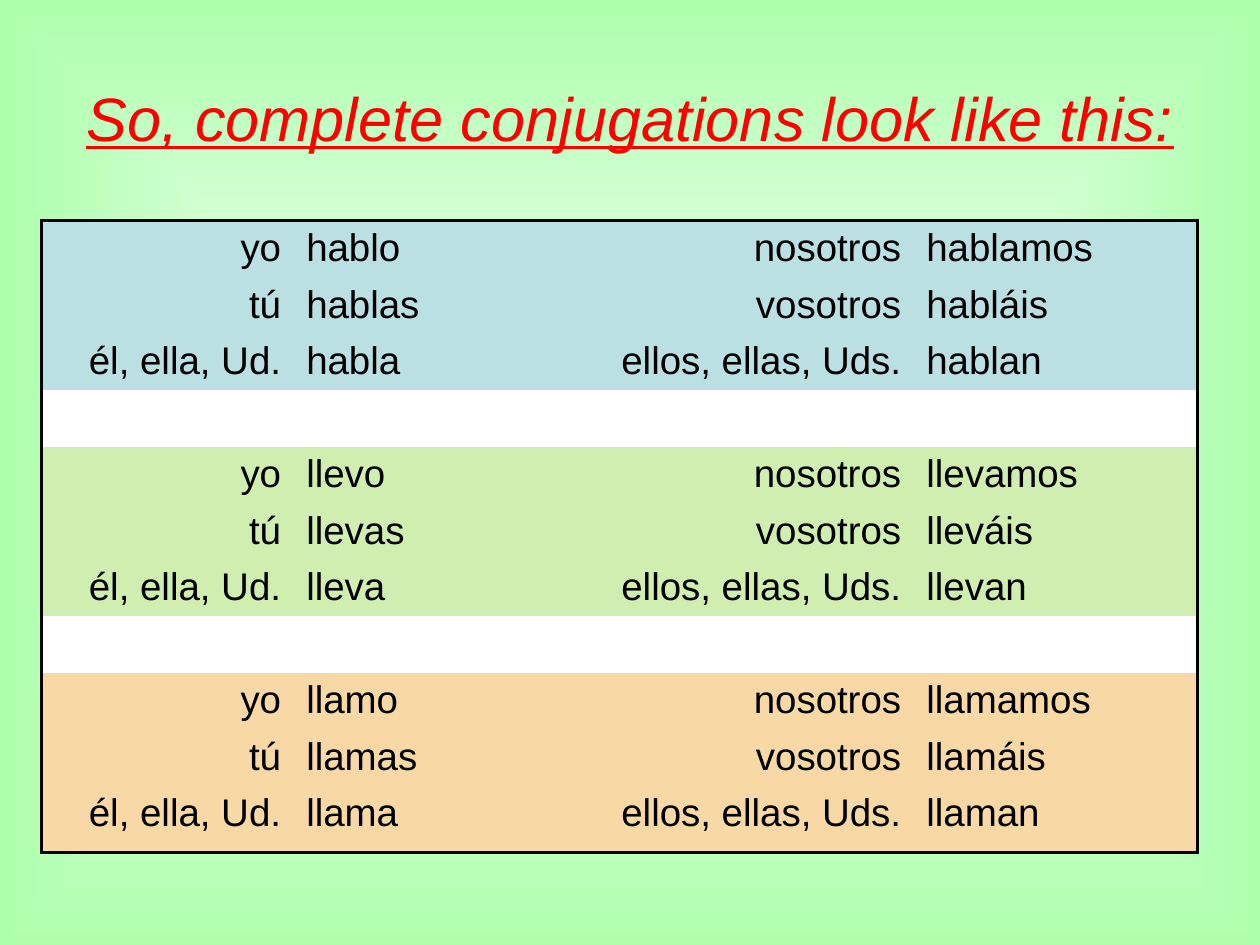
from dataclasses import dataclass

import lxml.etree
import pptx
import pptx.dml.color
import pptx.enum.text
import pptx.oxml.ns
import pptx.util

Cm = pptx.util.Cm
Pt = pptx.util.Pt
Align = pptx.enum.text.PP_ALIGN
qn = pptx.oxml.ns.qn


@dataclass(frozen=True)
class Theme:
    font: str = "Arial"
    title_size: float = 35
    cell_size: float = 22
    border_width: float = 2.25
    title: str = "FF0000"
    ink: str = "000000"
    gap: str = "FFFFFF"
    glow: str = "FFFFFF"
    rim: str = "ADFFAD"
    blue: str = "BBE0E3"
    green: str = "CFEEB0"
    orange: str = "F8D9A6"


def rgb(value):
    return pptx.dml.color.RGBColor.from_string(value)


class SlideBuilder:
    def __init__(self, deck, theme):
        self.theme = theme
        self.page = deck.slides.add_slide(deck.slide_layouts[5])

    def background(self):
        fill = self.page.background.fill
        fill.gradient()
        for stop, color, position in zip(
            fill.gradient_stops, (self.theme.glow, self.theme.rim), (0, 1)
        ):
            stop.color.rgb = rgb(color)
            stop.position = position
        gradient = self.page.element.find(".//" + qn("a:gradFill"))
        linear = gradient.find(qn("a:lin"))
        shape = lxml.etree.Element(qn("a:path"), path="shape")
        center = dict.fromkeys("ltrb", "50000")
        lxml.etree.SubElement(shape, qn("a:fillToRect"), center)
        gradient.replace(linear, shape)

    def style(self, para, size, color, align):
        para.alignment = align
        for span in para.runs:
            span.font.name = self.theme.font
            span.font.size = Pt(size)
            span.font.color.rgb = rgb(color)

    def title(self, text, left, top, width, height):
        box = self.page.shapes.title
        box.left, box.top, box.width, box.height = map(Cm, (left, top, width, height))
        frame = box.text_frame
        frame.text = text
        frame.word_wrap = True
        frame.auto_size = pptx.enum.text.MSO_AUTO_SIZE.NONE
        frame.vertical_anchor = pptx.enum.text.MSO_ANCHOR.MIDDLE
        para = frame.paragraphs[0]
        self.style(para, self.theme.title_size, self.theme.title, Align.CENTER)
        para.runs[0].font.italic = True
        para.runs[0].font.underline = True

    def borders(self, cell, drawn):
        properties = cell._tc.get_or_add_tcPr()
        for side in "LRTB":
            line = lxml.etree.SubElement(properties, qn("a:ln" + side))
            if side in drawn:
                line.set("w", str(Pt(self.theme.border_width)))
                solid = lxml.etree.SubElement(line, qn("a:solidFill"))
                lxml.etree.SubElement(solid, qn("a:srgbClr"), val=self.theme.ink)
            else:
                lxml.etree.SubElement(line, qn("a:noFill"))

    def table(self, rows, left, top, widths, heights):
        frame = self.page.shapes.add_table(
            len(rows), len(widths), Cm(left), Cm(top), Cm(sum(widths)), Cm(sum(heights))
        )
        table = frame.table
        table.first_row = False
        table.horz_banding = False
        for column, width in zip(table.columns, widths):
            column.width = Cm(width)
        last_row, last_column = len(rows) - 1, len(widths) - 1
        for r, (color, texts) in enumerate(rows):
            table.rows[r].height = Cm(heights[r])
            for c, text in enumerate(texts):
                cell = table.cell(r, c)
                edges = {"L": c == 0, "R": c == last_column, "T": r == 0, "B": r == last_row}
                self.borders(cell, [side for side, outer in edges.items() if outer])
                cell.fill.solid()
                cell.fill.fore_color.rgb = rgb(color)
                if text:
                    para = cell.text_frame.paragraphs[0]
                    para.text = text
                    align = Align.LEFT if c % 2 else Align.RIGHT
                    self.style(para, self.theme.cell_size, self.theme.ink, align)


def conjugation_rows(theme):
    pronouns = [("yo", "nosotros"), ("tú", "vosotros"), ("él, ella, Ud.", "ellos, ellas, Uds.")]
    endings = [("o", "amos"), ("as", "áis"), ("a", "an")]
    stems = [("habl", theme.blue), ("llev", theme.green), ("llam", theme.orange)]
    rows = []
    for stem, color in stems:
        if rows:
            rows.append((theme.gap, [""] * 4))
        for (one, many), (singular, plural) in zip(pronouns, endings):
            rows.append((color, [one, stem + singular, many, stem + plural]))
    return rows


def main():
    deck = pptx.Presentation()
    deck.slide_width, deck.slide_height = Cm(25.4), Cm(19.05)
    theme = Theme()
    slide = SlideBuilder(deck, theme)
    slide.background()
    slide.title("So, complete conjugations look like this:", 1.27, 0.76, 22.86, 3.18)
    rows = conjugation_rows(theme)
    heights = [1.14] * (len(rows) - 1) + [1.35]
    slide.table(rows, 0.84, 4.45, [5.08, 6.15, 6.35, 5.72], heights)
    deck.save("out.pptx")


if __name__ == "__main__":
    main()
